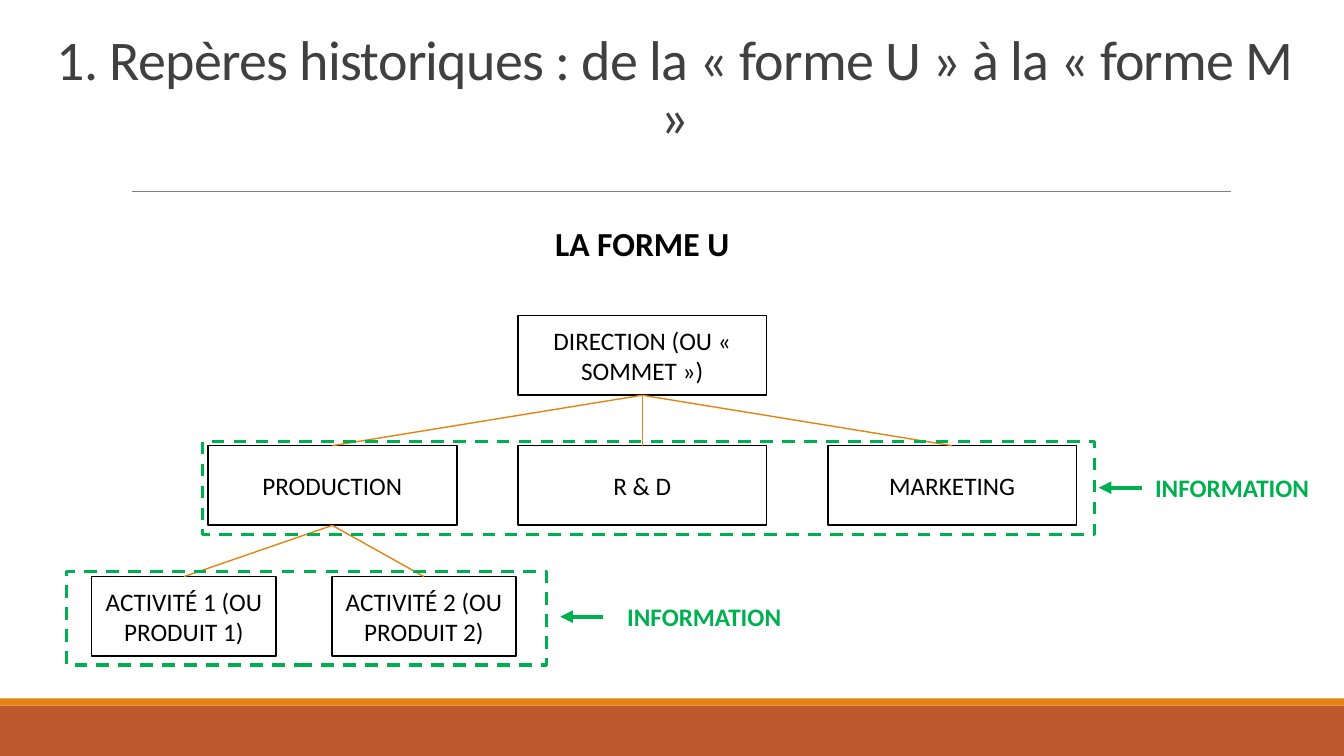
from lxml import etree
from pptx import Presentation
from pptx.dml.color import RGBColor
from pptx.enum import dml, shapes, text
from pptx.oxml import ns
from pptx.util import Cm, Pt

BLACK = RGBColor(0x00, 0x00, 0x00)
DARK_GREY = RGBColor(0x40, 0x40, 0x40)
GREY = RGBColor(0x80, 0x80, 0x80)
GREEN = RGBColor(0x00, 0xB0, 0x50)
ORANGE = RGBColor(0xE4, 0x83, 0x12)
RUST = RGBColor(0xBD, 0x58, 0x2C)

FONT = "Calibri"
BOX_WIDTH = 6.27
BOX_HEIGHT = 2.01
ACTIVITY_WIDTH = 4.65
FRAME_HEIGHT = 2.36
FIRST_COLUMN = 5.24
COLUMN_STEP = 7.81
FIRST_ACTIVITY = 2.31
ACTIVITY_STEP = 6.05
DIRECTION_TOP = 7.95
FUNCTION_TOP = 11.23
ACTIVITY_TOP = 14.53
TOP_SITE, BOTTOM_SITE = 0, 2


def write_text(shape, content, size, color=BLACK, bold=False):
    frame = shape.text_frame
    frame.word_wrap = True
    frame.vertical_anchor = text.MSO_ANCHOR.MIDDLE
    paragraph = frame.paragraphs[0]
    paragraph.text = content
    paragraph.alignment = text.PP_ALIGN.CENTER
    paragraph.font.name = FONT
    paragraph.font.size = Pt(size)
    paragraph.font.color.rgb = color
    paragraph.font.bold = bold


def add_label(slide, left, top, width, height, content, size, color=BLACK, bold=True):
    label = slide.shapes.add_textbox(Cm(left), Cm(top), Cm(width), Cm(height))
    write_text(label, content, size, color, bold)
    return label


def add_title(slide, content):
    title = add_label(slide, 0.69, 1.73, 32.64, 2.16, content, 40, DARK_GREY, False)
    title.text_frame.vertical_anchor = text.MSO_ANCHOR.BOTTOM
    paragraph = title.text_frame.paragraphs[0]
    paragraph.line_spacing = 0.85
    for run in paragraph.runs:
        run.font._element.set("spc", "-50")


def add_rectangle(slide, left, top, width, height):
    rectangle = slide.shapes.add_shape(
        shapes.MSO_SHAPE.RECTANGLE, Cm(left), Cm(top), Cm(width), Cm(height)
    )
    rectangle.shadow.inherit = False
    return rectangle


def add_band(slide, top, height, color):
    band = add_rectangle(slide, 0, top, 33.87, height)
    band.fill.solid()
    band.fill.fore_color.rgb = color
    band.line.fill.background()


def add_outline(slide, left, top, width, height, color, line_width):
    outline = add_rectangle(slide, left, top, width, height)
    outline.fill.background()
    outline.line.color.rgb = color
    outline.line.width = Pt(line_width)
    return outline


def add_box(slide, left, top, width, content):
    box = add_outline(slide, left, top, width, BOX_HEIGHT, BLACK, 1.25)
    write_text(box, content, 18)
    return box


def add_dashed_frame(slide, left, top, width):
    frame = add_outline(slide, left, top, width, FRAME_HEIGHT, GREEN, 2.25)
    frame.line.dash_style = dml.MSO_LINE.DASH


def add_line(slide, start, end, color, line_width):
    line = slide.shapes.add_connector(
        shapes.MSO_CONNECTOR.STRAIGHT, *(Cm(value) for value in (*start, *end))
    )
    line.line.color.rgb = color
    line.line.width = Pt(line_width)
    etree.SubElement(line._element.spPr, ns.qn("a:effectLst"))
    return line


def link_boxes(slide, parent, children):
    for child in children:
        line = add_line(slide, (0, 0), (0, 0), ORANGE, 1)
        line.begin_connect(parent, BOTTOM_SITE)
        line.end_connect(child, TOP_SITE)


def add_arrow(slide, start, end):
    arrow = add_line(slide, start, end, GREEN, 3)
    etree.SubElement(arrow.line._get_or_add_ln(), ns.qn("a:tailEnd"), type="triangle")


def main():
    presentation = Presentation()
    presentation.slide_width = Cm(33.87)
    presentation.slide_height = Cm(19.05)
    slide = presentation.slides.add_slide(presentation.slide_layouts[6])

    add_band(slide, 17.78, 1.27, RUST)
    add_band(slide, 17.6, 0.18, ORANGE)
    add_line(slide, (3.33, 4.82), (31.01, 4.82), GREY, 0.5)
    add_title(slide, "1. Repères historiques : de la « forme U » à la « forme M »")

    middle_column = FIRST_COLUMN + COLUMN_STEP
    add_label(slide, middle_column, 5.44, BOX_WIDTH, 1.37, "LA FORME U", 24)
    direction = add_box(
        slide, middle_column, DIRECTION_TOP, BOX_WIDTH, "DIRECTION (OU « SOMMET »)"
    )
    functions = [
        add_box(slide, FIRST_COLUMN + index * COLUMN_STEP, FUNCTION_TOP, BOX_WIDTH, name)
        for index, name in enumerate(("PRODUCTION", "R & D", "MARKETING"))
    ]
    activities = [
        add_box(
            slide,
            FIRST_ACTIVITY + index * ACTIVITY_STEP,
            ACTIVITY_TOP,
            ACTIVITY_WIDTH,
            f"ACTIVITÉ {index + 1} (OU PRODUIT {index + 1})",
        )
        for index in range(2)
    ]
    link_boxes(slide, direction, functions)
    link_boxes(slide, functions[0], activities)

    add_dashed_frame(slide, 5.11, 11.12, 22.48)
    add_dashed_frame(slide, 1.68, 14.4, 12.09)
    add_label(slide, 28.65, 11.23, 4.8, 2.13, "INFORMATION", 18, GREEN)
    add_label(slide, 15.19, 14.53, 5.11, 2.01, "INFORMATION", 18, GREEN)
    add_arrow(slide, (28.78, 12.29), (27.69, 12.29))
    add_arrow(slide, (15.19, 15.54), (14.12, 15.54))

    presentation.save("out.pptx")


if __name__ == "__main__":
    main()
